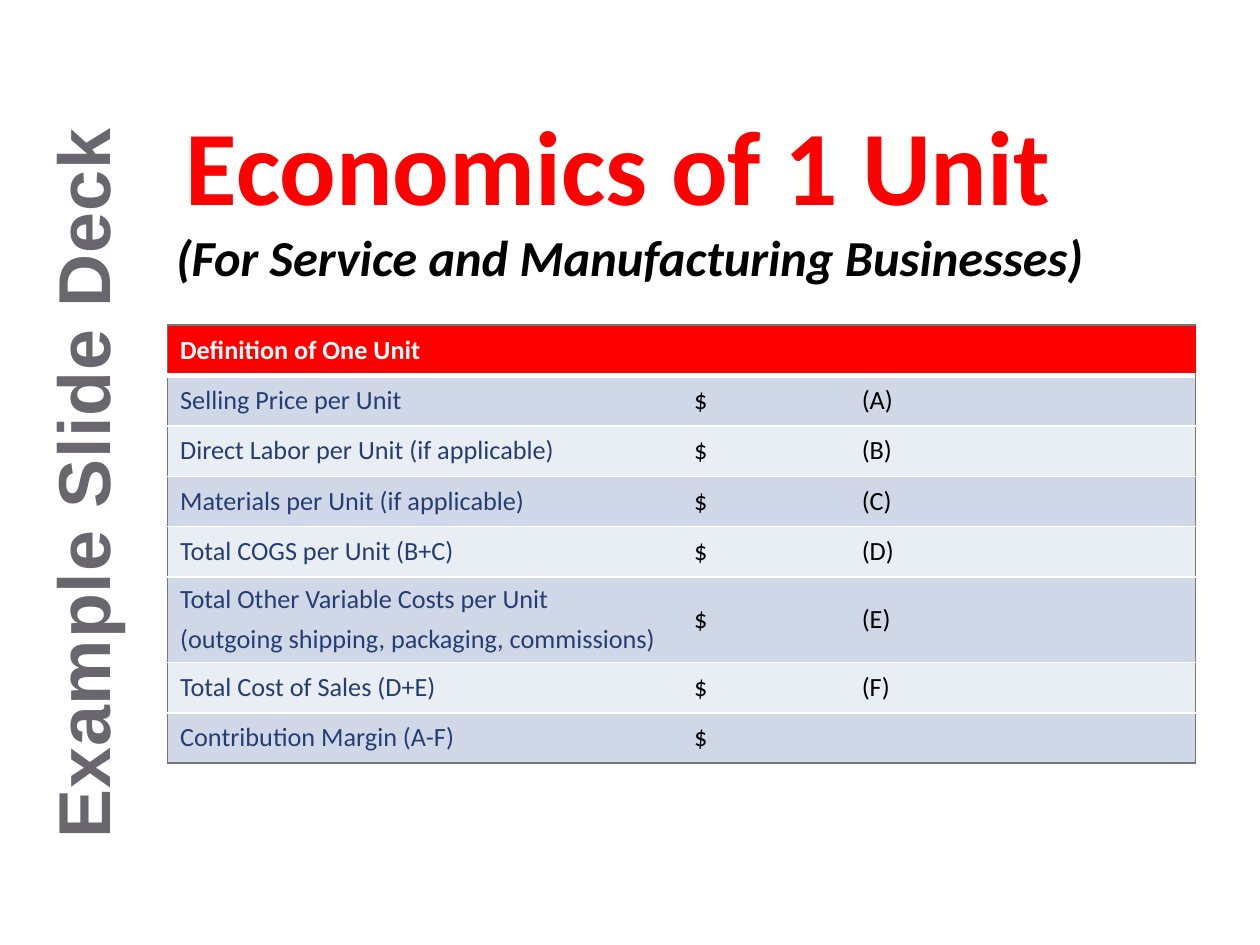
from lxml.etree import SubElement
from pptx import Presentation
from pptx.dml.color import RGBColor
from pptx.enum.text import MSO_ANCHOR as Anchor, MSO_AUTO_SIZE as AutoSize, PP_ALIGN as Align
from pptx.oxml.ns import qn
from pptx.util import Inches, Pt

RED = RGBColor(0xFF, 0x00, 0x00)
BLACK = RGBColor(0x00, 0x00, 0x00)
WHITE = RGBColor(0xFF, 0xFF, 0xFF)
NAVY = RGBColor(0x25, 0x3D, 0x75)
GRAY = RGBColor(0x69, 0x67, 0x6D)
EDGE = RGBColor(0x77, 0x77, 0x77)
BAND_DARK = RGBColor(0xD0, 0xD8, 0xE8)
BAND_LIGHT = RGBColor(0xE9, 0xED, 0xF4)


def write(paragraph, text, size=15, color=BLACK, font="Calibri", bold=False,
          italic=False, align=Align.LEFT, before=0):
    paragraph.alignment = align
    paragraph.space_before = Pt(before)
    run = paragraph.add_run()
    run.text = text
    run.font.name = font
    run.font.size = Pt(size)
    run.font.bold = bold
    run.font.italic = italic
    run.font.color.rgb = color
    return run


def add_border(cell, side, color=None, width=1):
    line = SubElement(cell._tc.get_or_add_tcPr(), qn(f"a:ln{side}"), w=str(Pt(width)))
    if color is None:
        SubElement(line, qn("a:noFill"))
    else:
        fill = SubElement(line, qn("a:solidFill"))
        SubElement(fill, qn("a:srgbClr"), val=str(color))


presentation = Presentation()
presentation.slide_width = Inches(10)
presentation.slide_height = Inches(7.5)
slide = presentation.slides.add_slide(presentation.slide_layouts[5])

title = slide.shapes.title
title.left, title.top = Inches(0.5), Inches(0.33)
title.width, title.height = Inches(9), Inches(1.75)
title_frame = title.text_frame
title_frame.auto_size = AutoSize.NONE
title_frame.vertical_anchor = Anchor.TOP
title_frame.margin_top = Inches(0.46)
write(title_frame.paragraphs[0], "Economics of 1 Unit ", size=60.3, color=RED,
      bold=True, align=Align.CENTER)
write(title_frame.add_paragraph(), "(For Service and Manufacturing Businesses)",
      size=28.8, bold=True, italic=True, align=Align.CENTER)

rows = [
    (["Definition of One Unit"], ""),
    (["Selling Price per Unit"], "$\t(A)"),
    (["Direct Labor per Unit (if applicable)"], "$\t(B)"),
    (["Materials per Unit (if applicable)"], "$\t(C)"),
    (["Total COGS per Unit (B+C)"], "$\t(D)"),
    (["Total Other Variable Costs per Unit",
      "(outgoing shipping, packaging, commissions)"], "$\t(E)"),
    (["Total Cost of Sales (D+E)"], "$\t(F)"),
    (["Contribution Margin (A-F)"], "$"),
]
last = len(rows) - 1
table = slide.shapes.add_table(len(rows), 2, Inches(1.33), Inches(2.58),
                               Inches(8.17), Inches(3.5)).table
table.first_row = False
table.horz_banding = False
for column in table.columns:
    column.width = Inches(4.08)

for index, (labels, amount) in enumerate(rows):
    table.rows[index].height = Inches(0.66 if len(labels) > 1 else 0.4)
    header = index == 0
    for column_index, lines in enumerate((labels, [amount])):
        cell = table.cell(index, column_index)
        cell.vertical_anchor = Anchor.MIDDLE
        add_border(cell, "L", EDGE if column_index == 0 else None)
        add_border(cell, "R", EDGE if column_index == 1 else None)
        add_border(cell, "T", EDGE if header else WHITE, 3 if index == 1 else 1)
        add_border(cell, "B", EDGE if index == last else WHITE, 3 if header else 1)
        cell.fill.solid()
        cell.fill.fore_color.rgb = RED if header else BAND_DARK if index % 2 else BAND_LIGHT
        for line_index, text in enumerate(lines):
            if not text:
                continue
            frame = cell.text_frame
            paragraph = frame.add_paragraph() if line_index else frame.paragraphs[0]
            color = WHITE if header else BLACK if column_index else NAVY
            write(paragraph, text, color=color, bold=header, before=4.8)
            if "\t" in text:
                tabs = SubElement(paragraph._p.get_or_add_pPr(), qn("a:tabLst"))
                SubElement(tabs, qn("a:tab"), pos=str(Inches(1.33)), algn="l")
table.cell(0, 0).merge(table.cell(0, 1))

side_label = slide.shapes.add_textbox(Inches(-2.51), Inches(3.35), Inches(6.32), Inches(0.81))
side_label.rotation = 270
side_label.text_frame.word_wrap = False
label_run = write(side_label.text_frame.paragraphs[0], "Example Slide Deck ", size=42,
                  color=GRAY, font="Arial", bold=True, align=Align.CENTER)
label_run.font._element.set("spc", "50")

presentation.save("out.pptx")
